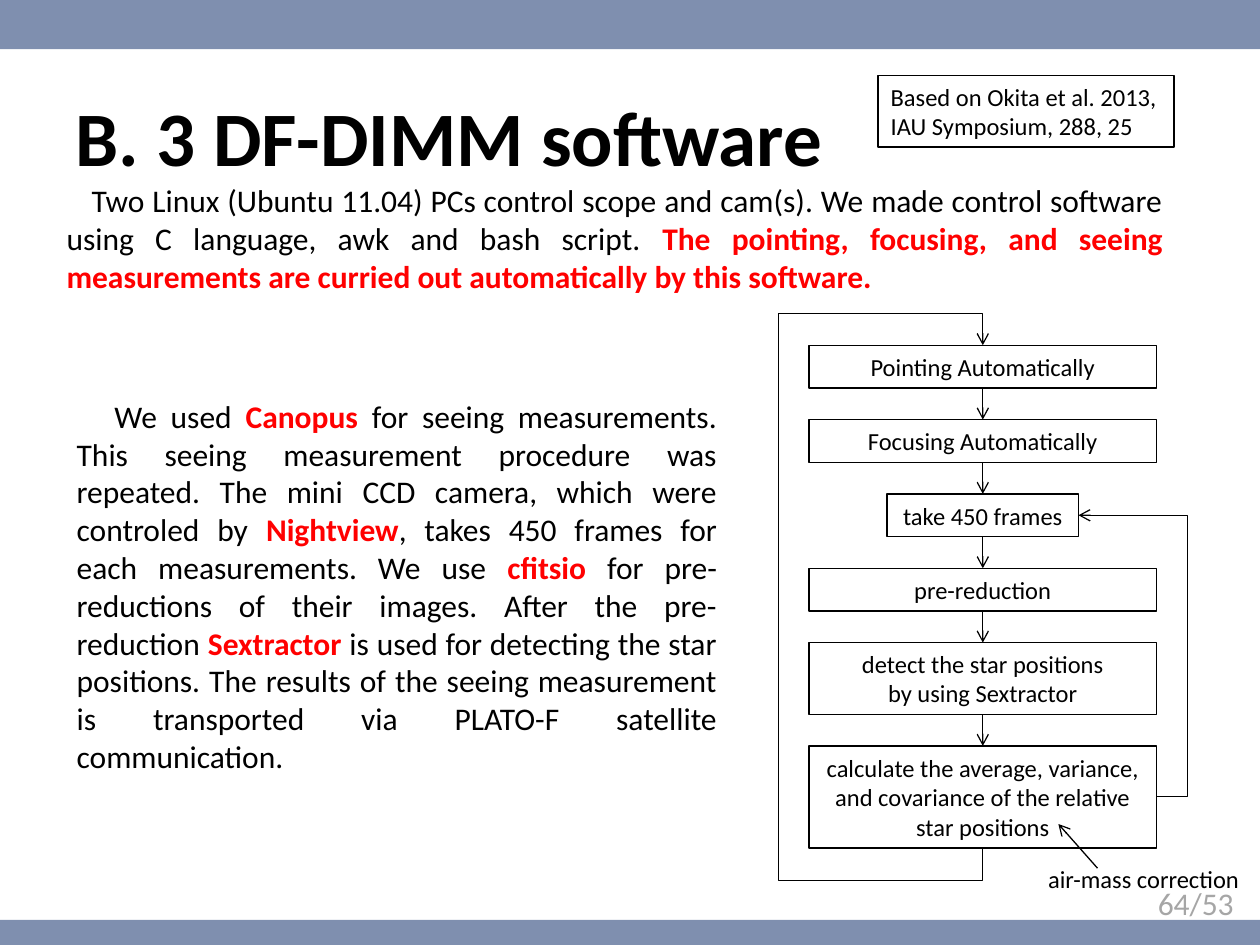
from lxml import etree
from pptx import Presentation
from pptx.dml.color import RGBColor
from pptx.enum.shapes import MSO_CONNECTOR, MSO_SHAPE
from pptx.enum.text import MSO_ANCHOR, PP_ALIGN
from pptx.oxml.ns import qn
from pptx.util import Inches, Pt

BLACK = RGBColor(0x00, 0x00, 0x00)
RED = RGBColor(0xFF, 0x00, 0x00)
GRAY = RGBColor(0xA6, 0xA6, 0xA6)
NAVY = RGBColor(0x00, 0x20, 0x60)

presentation = Presentation()
presentation.slide_width = Inches(10)
presentation.slide_height = Inches(7.5)
slide = presentation.slides.add_slide(presentation.slide_layouts[5])
shapes = slide.shapes


def write(shape, paragraphs, size, align=PP_ALIGN.LEFT, color=BLACK, wrap=True):
    """Fill a shape with paragraphs of plain text; **marked** parts are bold red."""
    frame = shape.text_frame
    frame.word_wrap = wrap
    for index, text in enumerate(paragraphs):
        paragraph = frame.paragraphs[0] if index == 0 else frame.add_paragraph()
        paragraph.alignment = align
        for number, part in enumerate(text.split("**")):
            if not part:
                continue
            run = paragraph.add_run()
            run.text = part
            run.font.name = "Calibri"
            run.font.size = Pt(size)
            run.font.bold = number % 2 == 1
            run.font.color.rgb = RED if number % 2 else color


def style_arrow(shape):
    """Thin black line with an open arrowhead at its end and no shadow."""
    shape.line.color.rgb = BLACK
    shape.line.width = Pt(0.75)
    etree.SubElement(shape.line._get_or_add_ln(), qn("a:tailEnd"), type="arrow")
    etree.SubElement(shape._element.spPr, qn("a:effectLst"))


# Translucent bars at top and bottom
for top, height in ((0, 0.39), (7.3, 0.2)):
    bar = shapes.add_shape(MSO_SHAPE.RECTANGLE, 0, Inches(top), Inches(10), Inches(height))
    bar.shadow.inherit = False
    bar.line.fill.background()
    bar.fill.solid()
    bar.fill.fore_color.rgb = NAVY
    color_element = bar._element.spPr.find(qn("a:solidFill"))[0]
    etree.SubElement(color_element, qn("a:alpha"), val="50000")

# Title
title = shapes.title
title.left, title.top = Inches(0.5), Inches(0.45)
title.width, title.height = Inches(9), Inches(1.25)
title.text_frame.vertical_anchor = MSO_ANCHOR.MIDDLE
write(title, ["B. 3 DF-DIMM software"], 44)
title.text_frame.paragraphs[0].runs[0].font.bold = True

# Running text: left, top, width, height, first-line indent, text
passages = [
    (0.43, 1.39, 8.9, 1.01, 0.2,
     "Two Linux (Ubuntu 11.04) PCs control scope and cam(s). We made control software "
     "using C language, awk and bash script. **The pointing, focusing, and seeing "
     "measurements are curried out automatically by this software.**"),
    (0.51, 3.1, 5.28, 2.83, 0.3,
     "We used **Canopus** for seeing measurements. This seeing measurement procedure was "
     "repeated. The mini CCD camera, which were controled by **Nightview**, takes 450 "
     "frames for each measurements. We use **cfitsio** for pre-reductions of their images. "
     "After the pre-reduction **Sextractor** is used for detecting the star positions. The "
     "results of the seeing measurement is transported via PLATO-F satellite communication."),
]
for left, top, width, height, indent, text in passages:
    box = shapes.add_textbox(Inches(left), Inches(top), Inches(width), Inches(height))
    write(box, [text], 18, PP_ALIGN.JUSTIFY)
    box.text_frame.paragraphs[0]._p.get_or_add_pPr().set("indent", str(Inches(indent)))

# Outlined boxes: the flowchart steps, evenly spaced, and the reference
CENTER, GAP = 7.8, 0.25
steps = [
    (2.76, 0.34, ["Pointing Automatically"]),
    (2.76, 0.34, ["Focusing Automatically"]),
    (1.52, 0.34, ["take 450 frames"]),
    (2.76, 0.34, ["pre-reduction"]),
    (2.76, 0.57, ["detect the star positions", "by using Sextractor"]),
    (2.76, 0.81, ["calculate the average, variance, and covariance of the relative star positions"]),
]
boxes = [(6.97, 0.6, 2.35, 0.57, 1, PP_ALIGN.LEFT,
          ["Based on Okita et al. 2013, IAU Symposium, 288, 25"])]
arrows = []
top = 2.74
for width, height, lines in steps:
    boxes.append((CENTER - width / 2, top, width, height, 0.75, PP_ALIGN.CENTER, lines))
    top += height + GAP
    arrows.append((CENTER, top - GAP, CENTER, top))
arrows.pop()

for left, top, width, height, line_width, align, lines in boxes:
    box = shapes.add_shape(MSO_SHAPE.RECTANGLE, Inches(left), Inches(top),
                           Inches(width), Inches(height))
    box.shadow.inherit = False
    box.fill.background()
    box.line.color.rgb = BLACK
    box.line.width = Pt(line_width)
    write(box, lines, 14, align)

# Straight arrows between steps and from the air-mass label
arrows.append((8.71, 6.89, 8.4, 6.54))
for ends in arrows:
    arrow = shapes.add_connector(MSO_CONNECTOR.STRAIGHT, *map(Inches, ends))
    style_arrow(arrow)

# Inner loop back to the frames
inner_loop = shapes.add_connector(MSO_CONNECTOR.ELBOW, Inches(9.18), Inches(6.32),
                                  Inches(8.56), Inches(4.09))
guides = inner_loop._element.spPr.find(qn("a:prstGeom")).get_or_add_avLst()
etree.SubElement(guides, qn("a:gd"), name="adj1", fmla="val -40000")
style_arrow(inner_loop)

# Outer loop back to the pointing
builder = shapes.build_freeform(Inches(CENTER), Inches(6.74))
corners = [(CENTER, 6.99), (6.18, 6.99), (6.18, 2.49), (CENTER, 2.49), (CENTER, 2.74)]
builder.add_line_segments([(Inches(x), Inches(y)) for x, y in corners], close=False)
outer_loop = builder.convert_to_shape()
outer_loop.fill.background()
style_arrow(outer_loop)

# Air-mass label and page number
labels = [
    (8.22, 6.81, 1.74, 0.34, "air-mass correction", 14, BLACK),
    (9.09, 6.97, 0.85, 0.4, "64/53", 18, GRAY),
]
for left, top, width, height, text, size, color in labels:
    label = shapes.add_textbox(Inches(left), Inches(top), Inches(width), Inches(height))
    write(label, [text], size, color=color, wrap=False)

presentation.save("out.pptx")
